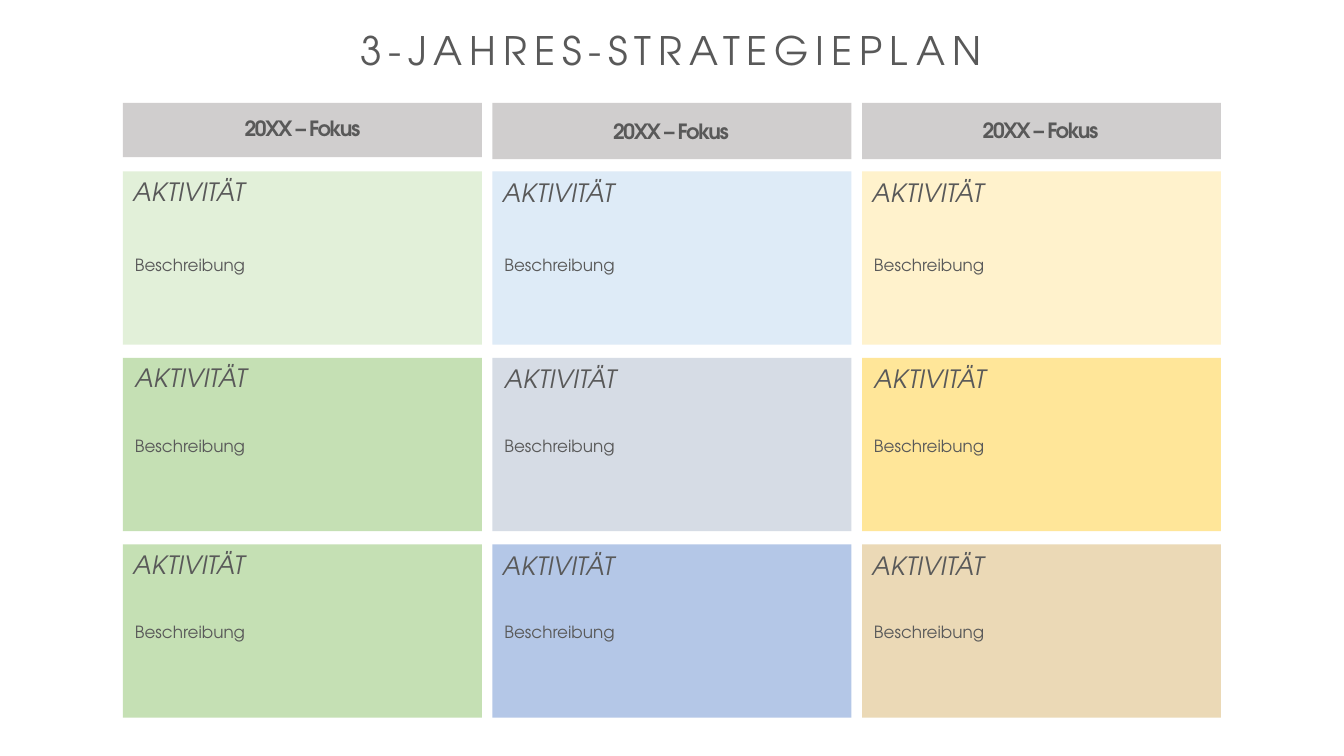
from pptx import Presentation
from pptx.dml.color import RGBColor as Rgb
from pptx.enum.shapes import MSO_SHAPE as Kind
from pptx.enum.text import MSO_AUTO_SIZE as Fit, PP_ALIGN as Align
from pptx.util import Inches as In, Pt

HUES = {
    "text": "595959",
    "head": "D0CECE",
    "cells": [
        ["E2F0D9", "C5E0B4", "C5E0B4"],
        ["DEEBF7", "D6DCE5", "B4C7E7"],
        ["FFF2CC", "FFE699", "EBD9B6"],
    ],
}
FACE = "TeX Gyre Adventor"
TITLE = {"size": Pt(28)}
FOCUS = {"size": Pt(15), "bold": True}
TASK = {"size": Pt(18), "italic": True}
NOTE = {"size": Pt(12)}

# Grid: three columns, a header row and three activity rows
LEFT, WIDE, STEP = 1.22, 3.56, 3.665
HEAD, TOP, HIGH, DROP = 1.02, 1.7, 1.72, 1.85

deck = Presentation()
deck.slide_width, deck.slide_height = In(13.33), In(7.5)
slide = deck.slides.add_slide(deck.slide_layouts[6])


def block(x, y, high, hue):
    box = slide.shapes.add_shape(Kind.RECTANGLE, In(x), In(y), In(WIDE), In(high))
    box.shadow.inherit = False
    box.fill.solid()
    box.fill.fore_color.rgb = Rgb.from_string(hue)
    box.line.fill.background()


def label(text, x, y, wide, high, look, align=Align.LEFT, space=0):
    frame = slide.shapes.add_textbox(In(x), In(y), In(wide), In(high)).text_frame
    frame.word_wrap = True
    frame.auto_size = Fit.SHAPE_TO_FIT_TEXT
    para = frame.paragraphs[0]
    para.alignment = align
    run = para.add_run()
    run.text = text
    for key, value in {"name": FACE, **look}.items():
        setattr(run.font, key, value)
    run.font.color.rgb = Rgb.from_string(HUES["text"])
    if space:  # letter spacing in points
        run._r.get_or_add_rPr().set("spc", str(space * 100))


# Title
label("3-JAHRES-STRATEGIEPLAN", 0.18, 0.21, 12.95, 0.57, TITLE, Align.CENTER, 5)

# Columns, each with its year header and activity cells
for col, hues in enumerate(HUES["cells"]):
    x = LEFT + col * STEP
    block(x, HEAD, 0.56 if col else 0.54, HUES["head"])
    label("20XX – Fokus", x - (0.01 if col else 0), (1.1, 1.13, 1.12)[col],
          WIDE, 0.35, FOCUS, Align.CENTER, -1)

    for row, hue in enumerate(hues):
        y = TOP + row * DROP
        block(x, y, HIGH, hue)
        nudge = 0.02 if row == 1 else 0
        lower = 0.01 if col else 0
        label("AKTIVITÄT", x + nudge, y + lower, 3.07, 0.4, TASK)
        label("Beschreibung", x + 0.02, (2.48, 4.27, 6.12)[row], WIDE, 0.3, NOTE)

deck.save("out.pptx")
